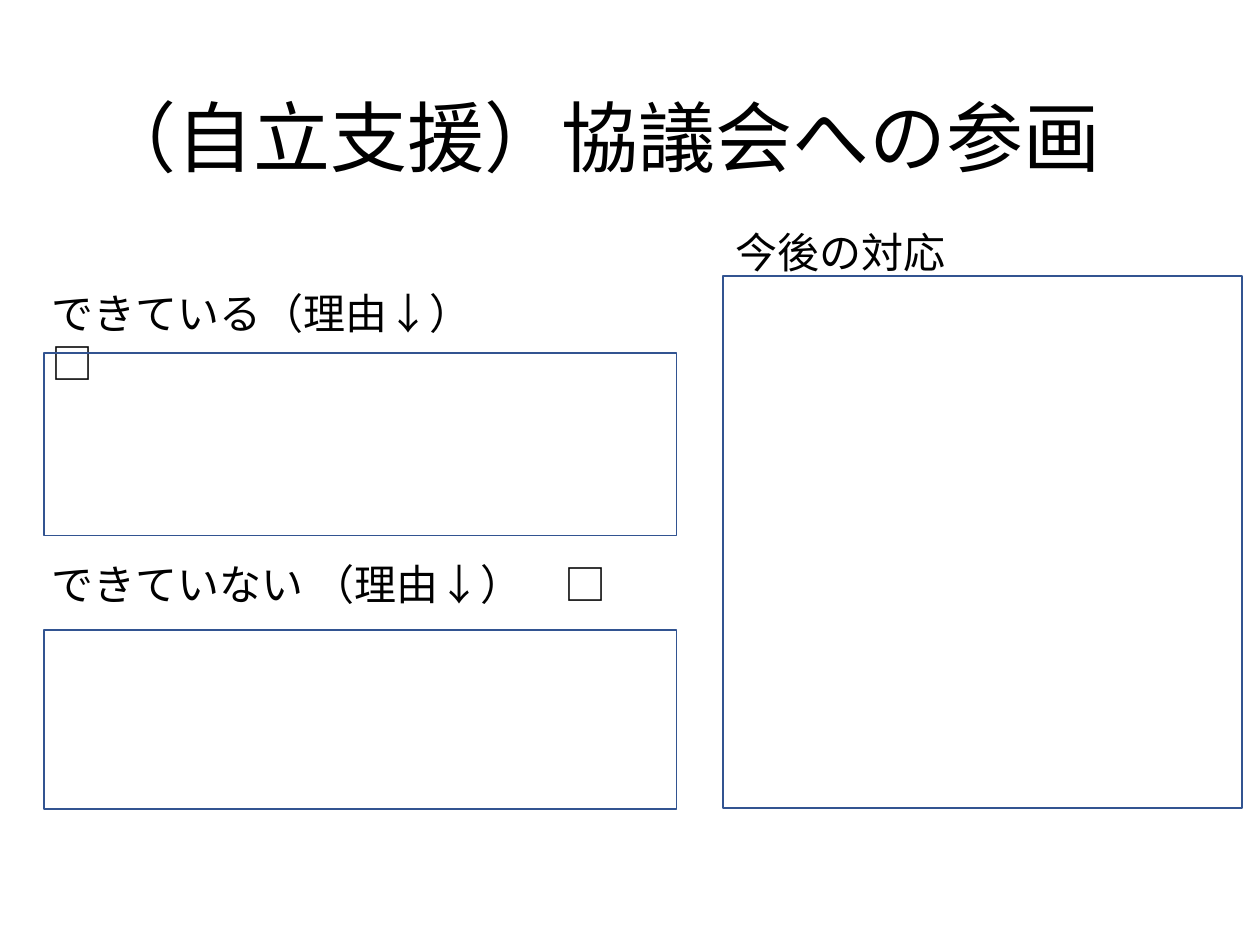
from pptx import Presentation
from pptx.dml.color import RGBColor
from pptx.enum.shapes import MSO_SHAPE
from pptx.enum.text import MSO_ANCHOR, MSO_AUTO_SIZE, PP_ALIGN
from pptx.util import Inches, Pt

# Slide size and column grid, in inches
WIDTH, HEIGHT = 10, 7.5
LEFT_COLUMN, LEFT_WIDTH = 0.35, 5.02
RIGHT_COLUMN, RIGHT_WIDTH = 5.74, 4.12
LABEL_LEFT, LABEL_HEIGHT = 0.31, 0.5
FONT, TEXT_COLOR, LINE_COLOR = "Calibri", "000000", "325491"


def color(hex_string):
    return RGBColor.from_string(hex_string)


def add_text(slide, text, left, top, width, height=LABEL_HEIGHT, size=24,
             anchor=MSO_ANCHOR.TOP, spacing=1.0, grow=True):
    box = slide.shapes.add_textbox(*map(Inches, (left, top, width, height)))
    frame = box.text_frame
    frame.word_wrap = True
    frame.vertical_anchor = anchor
    frame.auto_size = MSO_AUTO_SIZE.SHAPE_TO_FIT_TEXT if grow else MSO_AUTO_SIZE.NONE
    paragraph = frame.paragraphs[0]
    paragraph.text = text
    paragraph.alignment = PP_ALIGN.LEFT
    paragraph.line_spacing = spacing
    for run in paragraph.runs:
        run.font.name = FONT
        run.font.size = Pt(size)
        run.font.color.rgb = color(TEXT_COLOR)


def add_answer_box(slide, left, top, width, height):
    shape = slide.shapes.add_shape(
        MSO_SHAPE.RECTANGLE, *map(Inches, (left, top, width, height)))
    shape.shadow.inherit = False
    shape.fill.background()
    shape.line.color.rgb = color(LINE_COLOR)
    shape.line.width = Pt(1)


def main():
    presentation = Presentation()
    presentation.slide_width = Inches(WIDTH)
    presentation.slide_height = Inches(HEIGHT)
    slide = presentation.slides.add_slide(presentation.slide_layouts[6])

    # Title
    add_text(slide, "（自立支援）協議会への参画", 0.69, 0.4, 8.62, 1.45, size=44,
             anchor=MSO_ANCHOR.MIDDLE, spacing=0.9, grow=False)

    # Labels with check boxes; the first check box stands on its own line
    add_text(slide, "できている（理由↓）\v□", LABEL_LEFT, 2.23, 4.52)
    add_text(slide, "できていない （理由↓）　□", LABEL_LEFT, 4.38, 4.94)

    # Answer boxes: two reasons on the left, next steps on the right
    add_answer_box(slide, LEFT_COLUMN, 5, LEFT_WIDTH, 1.42)
    add_answer_box(slide, LEFT_COLUMN, 2.8, LEFT_WIDTH, 1.45)
    add_answer_box(slide, RIGHT_COLUMN, 2.19, RIGHT_WIDTH, 4.22)
    add_text(slide, "今後の対応", RIGHT_COLUMN, 1.75, 2.48)

    presentation.save("out.pptx")


if __name__ == "__main__":
    main()
